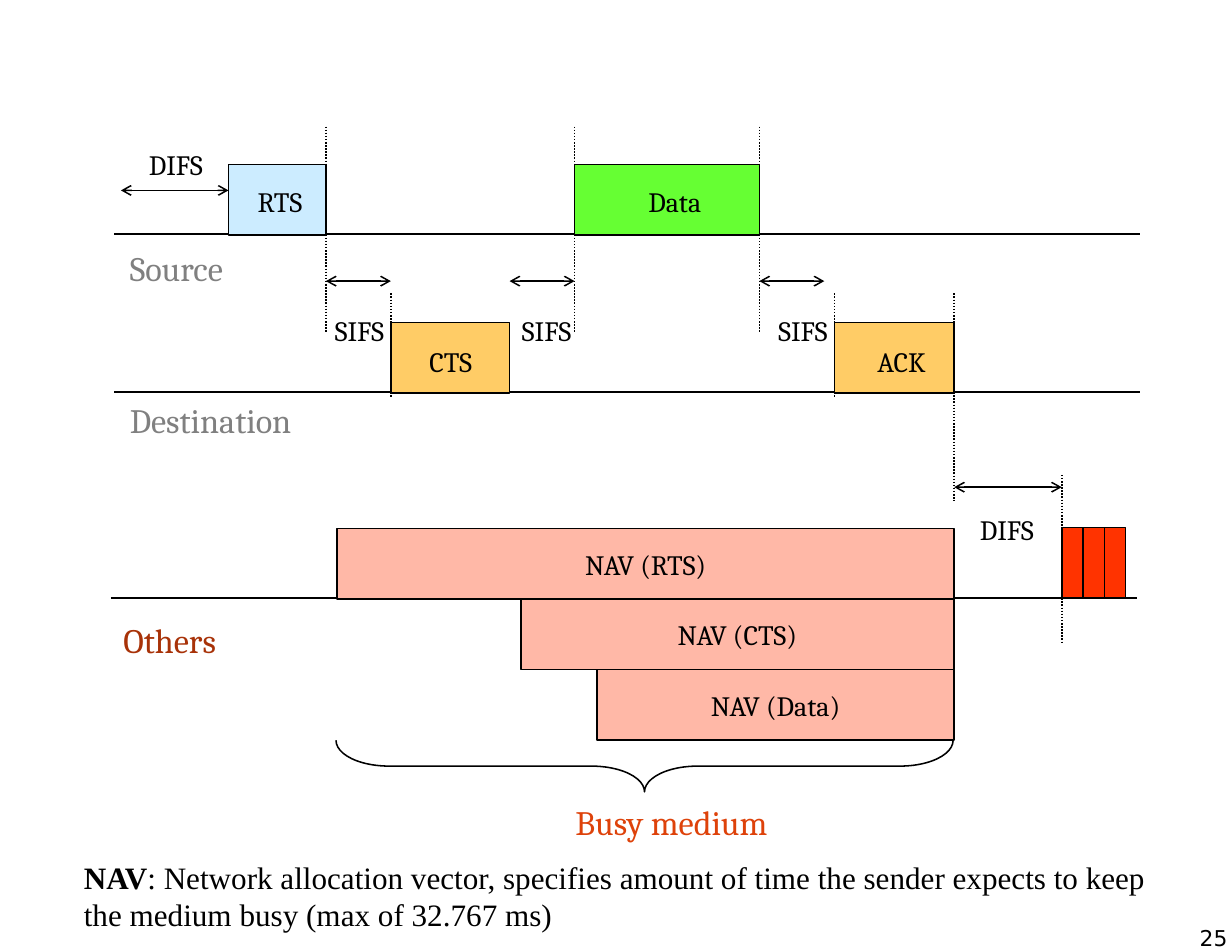
from lxml.etree import SubElement
from pptx import Presentation
from pptx.dml.color import RGBColor
from pptx.enum.dml import MSO_LINE
from pptx.enum.shapes import MSO_CONNECTOR, MSO_SHAPE
from pptx.enum.text import MSO_ANCHOR, PP_ALIGN
from pptx.oxml.ns import qn
from pptx.util import Inches, Pt


def color(hex_value):
    return RGBColor.from_string(hex_value)


class TimingDiagram:
    font = "Cambria"
    ink = "000000"
    label_size = 18
    title_size = 22
    frame_height = 0.63

    def __init__(self, slide):
        self.slide = slide

    def set_text(self, shape, text, size, hex_value, wrap=False, font=None,
                 align=PP_ALIGN.CENTER, margins=(0.11, 0.06)):
        frame = shape.text_frame
        frame.text = text
        frame.word_wrap = wrap
        frame.vertical_anchor = MSO_ANCHOR.MIDDLE
        frame.margin_left = frame.margin_right = Inches(margins[0])
        frame.margin_top = frame.margin_bottom = Inches(margins[1])
        paragraph = frame.paragraphs[0]
        paragraph.alignment = align
        for run in paragraph.runs:
            run.font.size = Pt(size)
            run.font.name = font or self.font
            run.font.color.rgb = color(hex_value)
        return paragraph

    def text(self, content, left, top, width, height=0.42, size=None,
             hex_value=None, **options):
        box = self.slide.shapes.add_textbox(
            Inches(left), Inches(top), Inches(width), Inches(height))
        return self.set_text(box, content, size or self.label_size,
                             hex_value or self.ink, **options)

    def shape(self, kind, left, top, width, height):
        shape = self.slide.shapes.add_shape(
            kind, Inches(left), Inches(top), Inches(width), Inches(height))
        shape.shadow.inherit = False
        shape.line.color.rgb = color(self.ink)
        shape.line.width = Pt(1)
        return shape

    def frame(self, left, top, width, fill, label=None):
        box = self.shape(MSO_SHAPE.RECTANGLE, left, top, width, self.frame_height)
        box.fill.solid()
        box.fill.fore_color.rgb = color(fill)
        if label:
            self.set_text(box, label, self.label_size, self.ink)

    def brace(self, left, top, width, height):
        """Draw a brace that opens upwards over the given area."""
        brace = self.shape(MSO_SHAPE.LEFT_BRACE, left + (width - height) / 2,
                           top - (width - height) / 2, height, width)
        brace.rotation = 270
        brace.adjustments[0] = 1.03
        brace.adjustments[1] = 0.5
        brace.fill.background()

    def line(self, x1, y1, x2, y2):
        connector = self.slide.shapes.add_connector(
            MSO_CONNECTOR.STRAIGHT, Inches(x1), Inches(y1), Inches(x2), Inches(y2))
        connector.line.color.rgb = color(self.ink)
        connector.line.width = Pt(1)
        SubElement(connector._element.spPr, qn("a:effectLst"))
        return connector

    def time_mark(self, x, top, bottom):
        self.line(x, top, x, bottom).line.dash_style = MSO_LINE.ROUND_DOT

    def interval(self, start, end, y):
        """Draw a horizontal arrow with a head at each end."""
        line = self.line(start, y, end, y).line._get_or_add_ln()
        for end_name in ("a:headEnd", "a:tailEnd"):
            SubElement(line, qn(end_name), type="arrow")


def main():
    presentation = Presentation()
    presentation.slide_width = Inches(11)
    presentation.slide_height = Inches(8.5)
    slide = presentation.slides.add_slide(presentation.slide_layouts[6])
    diagram = TimingDiagram(slide)

    rts_end, cts_start, cts_end = 2.91, 3.49, 4.55
    data_start, data_end = 5.13, 6.78
    ack_start, ack_end, contention_start = 7.45, 8.52, 9.48
    sifs, difs = 0.58, 0.96
    source_y, destination_y, others_y = 2.09, 3.5, 5.34

    for left, y in ((1.02, source_y), (1.02, destination_y), (0.99, others_y)):
        diagram.line(left, y, left + 9.16, y)

    for name, left, top, width, hex_value in (
            ("Source", 1, 2.15, 1.15, "808080"),
            ("Destination", 0.98, 3.51, 1.8, "808080"),
            ("Others", 0.94, 5.47, 1.15, "A83208"),
            ("Busy medium", 4.76, 7.1, 2.47, "DE420A")):
        diagram.text(name, left, top, width, 0.48, diagram.title_size, hex_value)

    for x in (rts_end, data_start, data_end):
        diagram.time_mark(x, 1.13, 2.97)
    for x, top, bottom in ((cts_start, 2.62, 3.55), (ack_start, 2.62, 3.55),
                           (ack_end, 2.62, 4.47), (contention_start, 4.24, 5.74)):
        diagram.time_mark(x, top, bottom)

    for left, top, width, fill in (
            (2.04, 1.47, 0.87, "CCECFF"),
            (data_start, 1.47, data_end - data_start, "66FF33"),
            (cts_start, 2.88, cts_end - cts_start, "FFCC66"),
            (ack_start, 2.88, ack_end - ack_start, "FFCC66")):
        diagram.frame(left, top, width, fill)
    for name, left, top, width in (
            ("RTS", 2.16, 1.59, 0.68), ("Data", 5.65, 1.59, 0.75),
            ("CTS", 3.59, 3.02, 0.87), ("ACK", 7.65, 3.02, 0.8)):
        diagram.text(name, left, top, width)

    for start, label_left in ((rts_end, 2.85), (cts_end, 4.52), (data_end, 6.81)):
        diagram.interval(start, start + sifs, 2.51)
        diagram.text("SIFS", label_left, 2.74, 0.72)
    for start, y, label_left, label_top in ((1.08, 1.7, 1.18, 1.26),
                                            (ack_end, 4.35, 8.6, 4.52)):
        diagram.interval(start, start + difs, y)
        diagram.text("DIFS", label_left, label_top, 0.78)

    slot_width = 0.19
    for slot in range(3):
        diagram.frame(contention_start + slot * slot_width, 4.71, slot_width, "FF3300")

    nav_start, nav_top = 3.01, 4.72
    for row, (name, start) in enumerate((("NAV (RTS)", nav_start),
                                         ("NAV (CTS)", 4.65), ("NAV (Data)", 5.33))):
        diagram.frame(start, nav_top + row * diagram.frame_height,
                      ack_end - start, "FFB8A7", name)
    diagram.brace(nav_start - 0.01, 6.61, ack_end - nav_start, 0.46)

    definition = diagram.text(
        "NAV", 0.65, 7.61, 9.85, 0.77, 20, wrap=True, font="Times New Roman",
        align=PP_ALIGN.LEFT, margins=(0.1, 0.05))
    term = definition.runs[0]
    term.font.bold = True
    explanation = definition.add_run()
    explanation.text = (": Network allocation vector, specifies amount of time the "
                        "sender expects to keep the medium busy (max of 32.767 ms)")
    explanation.font.size = term.font.size
    explanation.font.name = term.font.name
    explanation.font.color.rgb = color(diagram.ink)

    diagram.text("25", 10.71, 8.25, 0.25, 0.24, 14, font="DejaVu Sans",
                 align=PP_ALIGN.RIGHT, margins=(0, 0))
    presentation.save("out.pptx")


if __name__ == "__main__":
    main()
